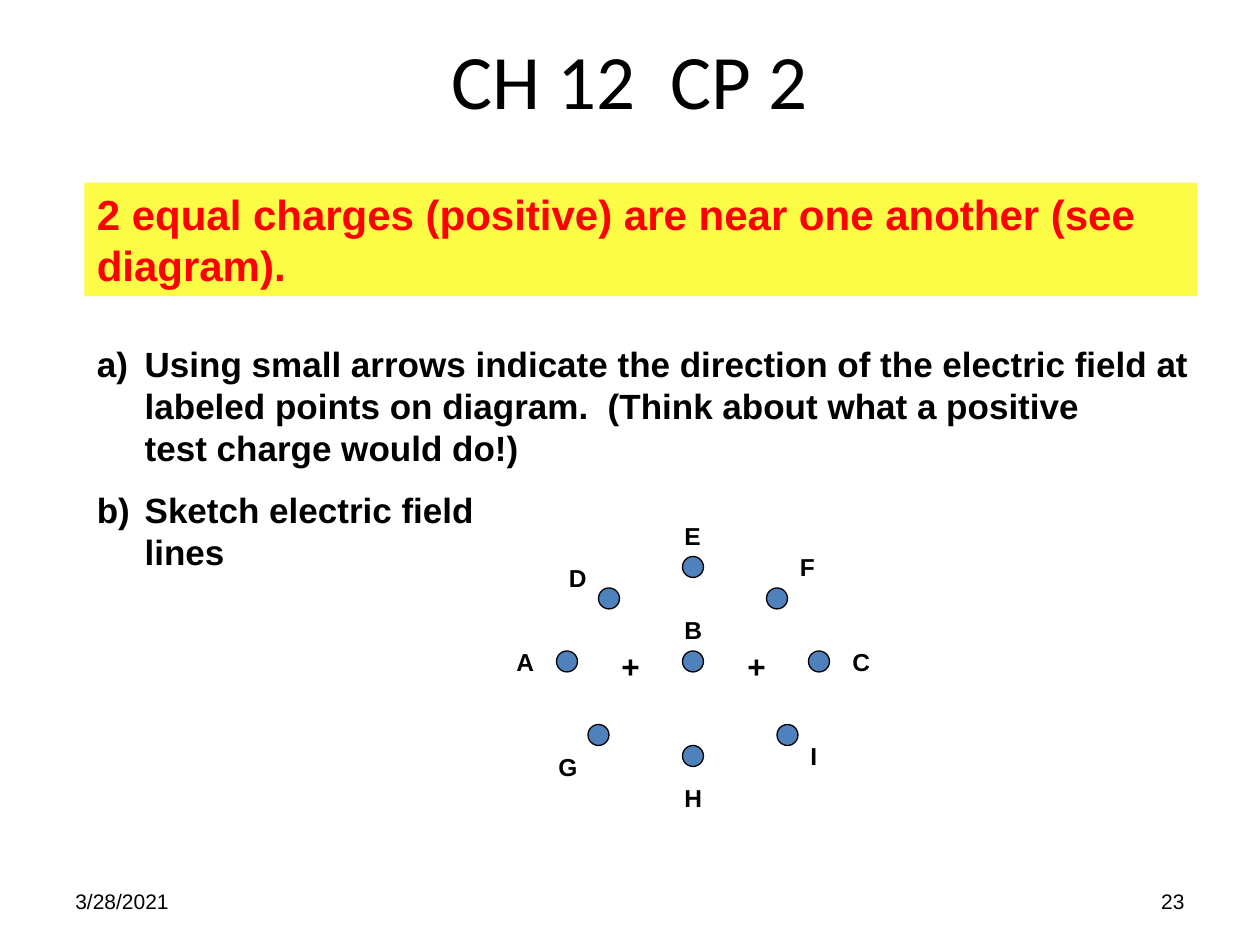
from pptx import Presentation
from pptx.dml.color import RGBColor
from pptx.enum.shapes import MSO_SHAPE
from pptx.enum.text import MSO_ANCHOR, PP_ALIGN
from pptx.util import Inches, Pt

BLACK = RGBColor(0, 0, 0)
RED = RGBColor(0xFF, 0, 0)
YELLOW = RGBColor(0xFC, 0xFC, 0x46)
BLUE = RGBColor(0x4F, 0x81, 0xBD)
LEFT, CENTER, RIGHT = PP_ALIGN.LEFT, PP_ALIGN.CENTER, PP_ALIGN.RIGHT
TOP, MIDDLE = MSO_ANCHOR.TOP, MSO_ANCHOR.MIDDLE
RECT, OVAL = MSO_SHAPE.RECTANGLE, MSO_SHAPE.OVAL

# Content
TITLE = "CH 12  CP 2"
PROMPT = "2 equal charges (positive) are near one another (see diagram)."
TASKS = [  # start number, box, lines
    (1, (0.67, 2.67, 8.91, 1.1),
     ["Using small arrows indicate the direction of the electric field at",
      "labeled points on diagram.  (Think about what a positive",
      "test charge would do!)"]),
    (2, (0.67, 3.83, 3.8, 0.77), ["Sketch electric field lines"]),
]
FOOTER = [("3/28/2021", 0.5, LEFT), ("23", 7.17, RIGHT)]

# Diagram: corners in grid steps of 1/12 inch
STEP = 1 / 12
POINTS = [  # label, dot corner, label corner
    ("A", (53, 62), (48, 61)),
    ("B", (65, 62), (64, 58)),
    ("C", (77, 62), (80, 61)),
    ("D", (57, 56), (53, 53)),
    ("E", (65, 53), (64, 49)),
    ("F", (73, 56), (75, 52)),
    ("G", (56, 69), (52, 71)),
    ("H", (65, 71), (64, 74)),
    ("I", (74, 69), (76, 70)),
]
CHARGES = [(58, 61), (70, 61)]
HANG = 0.38


def write(shape, lines, size=14, color=BLACK, bold=True, font="Arial",
          align=LEFT, anchor=TOP, wrap=True):
    frame = shape.text_frame
    frame.word_wrap = wrap
    frame.vertical_anchor = anchor
    frame.text = "\n".join(lines)
    for para in frame.paragraphs:
        para.alignment = align
        for run in para.runs:
            run.font.size = Pt(size)
            run.font.bold = bold
            run.font.name = font
            run.font.color.rgb = color


def place(box):
    return [Inches(v) for v in box]


def cell(spot, wide, high):
    return place((spot[0] * STEP, spot[1] * STEP, wide, high))


def number(shape, start):
    for i, para in enumerate(shape.text_frame.paragraphs):
        props = para._p.get_or_add_pPr()
        props.set("marL", str(Inches(HANG)))
        props.set("indent", str(0 if i else -Inches(HANG)))
        if i == 0:
            mark = props.makeelement(
                "{http://schemas.openxmlformats.org/drawingml/2006/main}buAutoNum",
                {"type": "alphaLcParenR", "startAt": str(start)})
            props.append(mark)


def main():
    deck = Presentation()
    deck.slide_width, deck.slide_height = Inches(10), Inches(7.5)
    slide = deck.slides.add_slide(deck.slide_layouts[5])
    shapes = slide.shapes

    # Title
    title = shapes.title
    title.left, title.top, title.width, title.height = place((0.5, 0, 9, 1.25))
    write(title, [TITLE], size=44, bold=False, font="Calibri",
          align=CENTER, anchor=MIDDLE)

    # Prompt band
    band = shapes.add_shape(RECT, *place((0.67, 1.45, 8.83, 0.9)))
    band.shadow.inherit = False
    band.fill.solid()
    band.fill.fore_color.rgb = YELLOW
    band.line.fill.background()
    write(band, [PROMPT], size=24, color=RED)

    # Tasks
    for start, box, lines in TASKS:
        task = shapes.add_textbox(*place(box))
        write(task, lines, size=20)
        number(task, start)

    # Charge diagram
    group = shapes.add_group_shape().shapes
    for name, spot, tag in POINTS:
        dot = group.add_shape(OVAL, *cell(spot, 2 * STEP, 2 * STEP))
        dot.shadow.inherit = False
        dot.fill.solid()
        dot.fill.fore_color.rgb = BLUE
        dot.line.color.rgb = BLACK
        dot.line.width = Pt(0.75)
        write(group.add_textbox(*cell(tag, 0.34, 0.33)), [name], wrap=False)
    for spot in CHARGES:
        write(group.add_textbox(*cell(spot, 0.35, 0.4)), ["+"], size=18,
              wrap=False)

    # Footer
    for text, left, align in FOOTER:
        write(shapes.add_textbox(*place((left, 6.95, 2.33, 0.4))), [text],
              size=12, bold=False, align=align, anchor=MIDDLE)

    deck.save("out.pptx")


if __name__ == "__main__":
    main()
